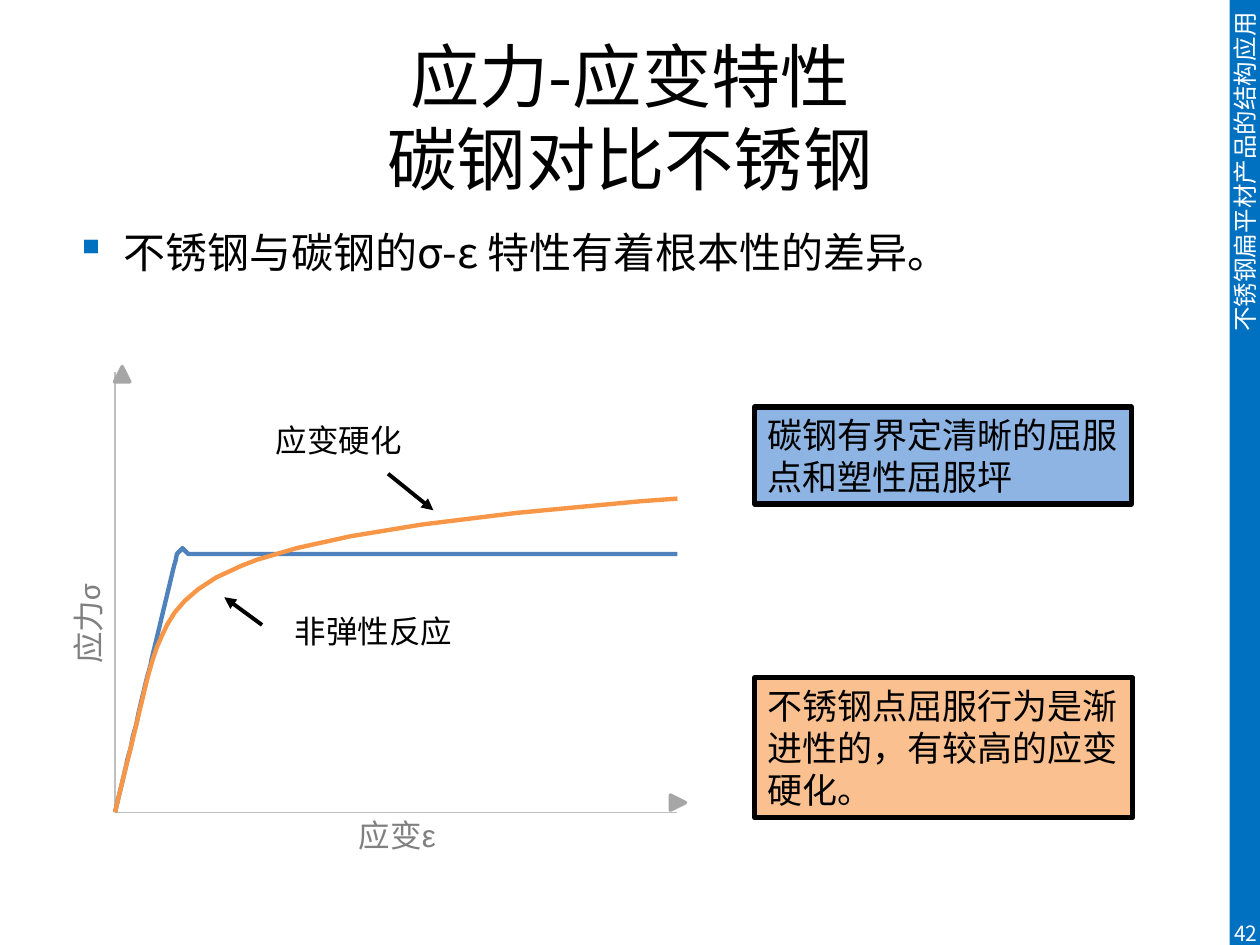
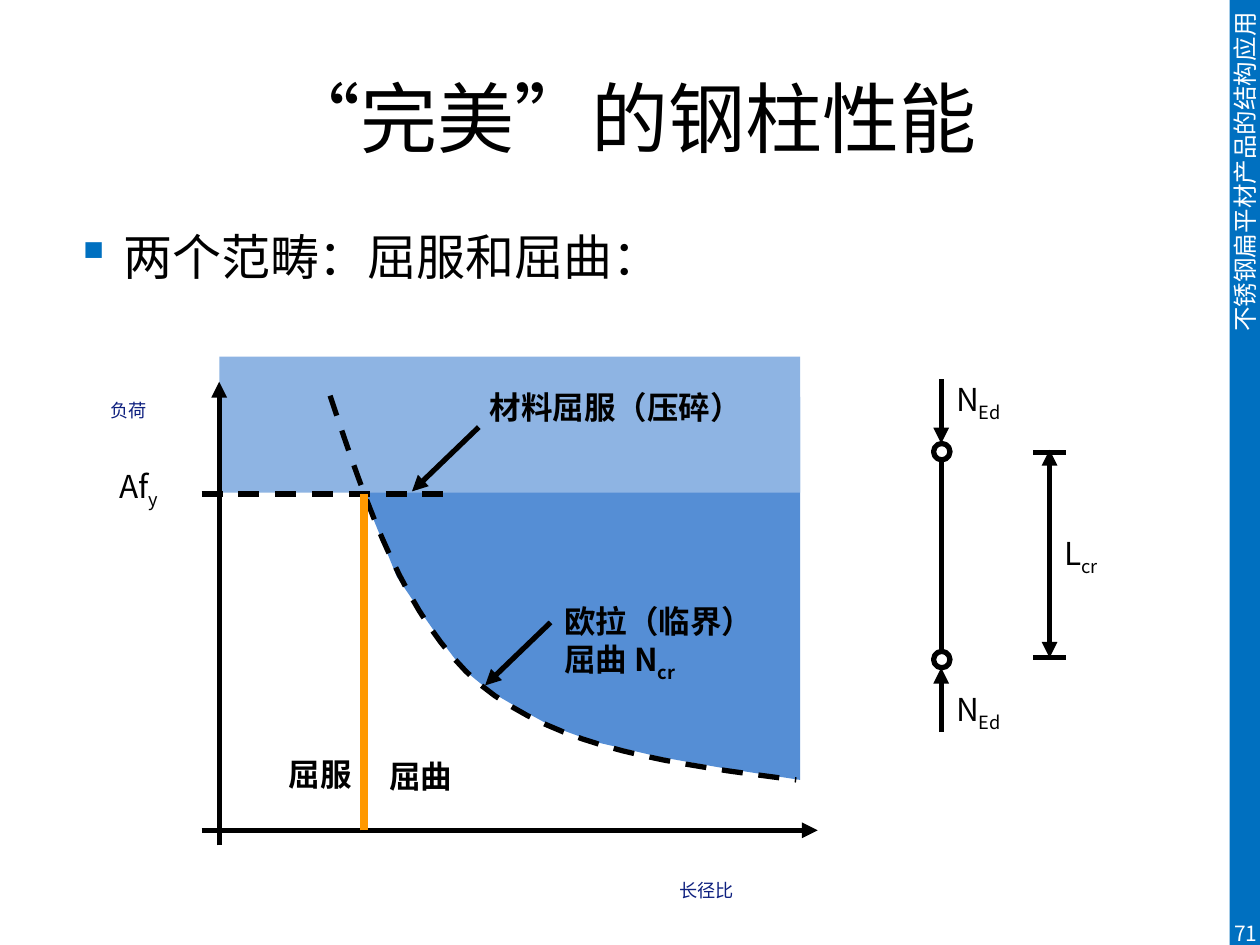
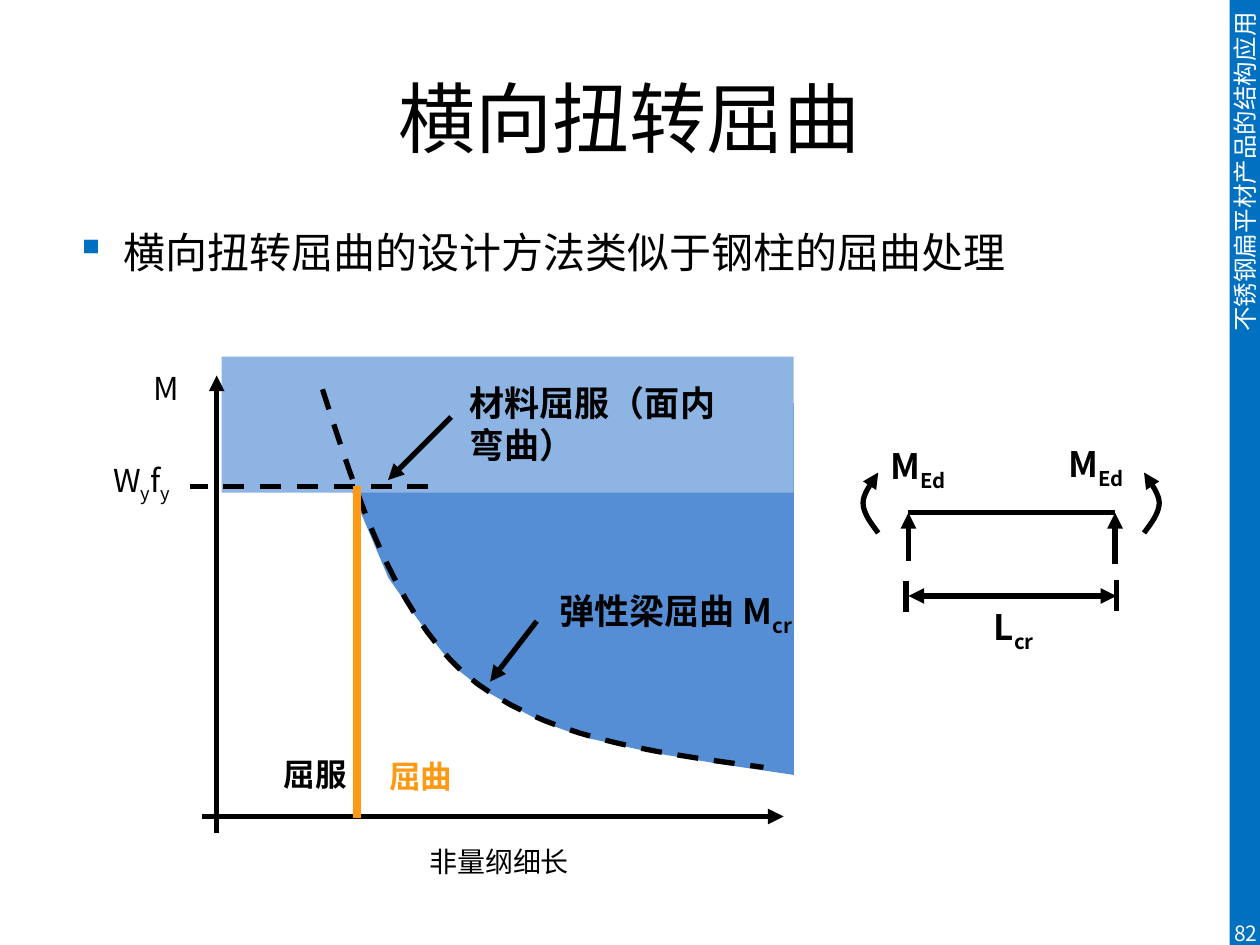
from lxml import etree
from pptx import Presentation
from pptx.chart.data import XyChartData
from pptx.dml.color import RGBColor
from pptx.enum.chart import XL_CHART_TYPE, XL_TICK_LABEL_POSITION, XL_TICK_MARK
from pptx.enum.dml import MSO_LINE
from pptx.enum.shapes import MSO_CONNECTOR, MSO_SHAPE
from pptx.enum.text import MSO_ANCHOR, PP_ALIGN
from pptx.oxml import parse_xml
from pptx.oxml.ns import nsdecls, qn
from pptx.util import Inches, Pt

LEFT, CENTER, RIGHT = PP_ALIGN.LEFT, PP_ALIGN.CENTER, PP_ALIGN.RIGHT
TOP, MIDDLE = MSO_ANCHOR.TOP, MSO_ANCHOR.MIDDLE
RECTANGLE, OVAL = MSO_SHAPE.RECTANGLE, MSO_SHAPE.OVAL
TRIANGLE = MSO_SHAPE.ISOSCELES_TRIANGLE
STRAIGHT, DASH = MSO_CONNECTOR.STRAIGHT, MSO_LINE.DASH
SMOOTH_SCATTER = XL_CHART_TYPE.XY_SCATTER_SMOOTH_NO_MARKERS
NO_LABELS, NO_TICKS = XL_TICK_LABEL_POSITION.NONE, XL_TICK_MARK.NONE

FONT = "Noto Sans CJK SC"
GREEK_FONTS = {"ε": "Arial", "σ": "Calibri"}
COLORS = {
    "band": "0070C0", "white": "FFFFFF", "black": "000000", "navy": "0E207F",
    "label": "808080", "arrowhead": "A6A6A6", "axis": "BFBFBF",
    "yield": "8EB4E3", "buckling": "558ED5", "stainless box": "FAC090",
    "stainless": "F79646", "carbon": "4F81BD",
    "orange": "FF9900", "amber": "FE9914",
}
RGB = {name: RGBColor.from_string(value) for name, value in COLORS.items()}


def add_text(slide, box, text, size=18, color="black", bold=False, align=LEFT,
             anchor=TOP, fill=None, border=0, margin=None):
    """Text alternates between normal and subscript at each bar."""
    left, top, width, height = [Inches(value) for value in box]
    if fill:
        shape = slide.shapes.add_shape(RECTANGLE, left, top, width, height)
        shape.shadow.inherit = False
        shape.fill.solid()
        shape.fill.fore_color.rgb = RGB[fill]
        if border:
            shape.line.color.rgb = RGB["black"]
            shape.line.width = Pt(border)
        else:
            shape.line.fill.background()
    else:
        shape = slide.shapes.add_textbox(left, top, width, height)
    frame = shape.text_frame
    frame.word_wrap = True
    frame.vertical_anchor = anchor
    if margin is not None:
        frame.margin_left = frame.margin_right = Inches(margin)
        frame.margin_top = frame.margin_bottom = Inches(margin)
    paragraph = frame.paragraphs[0]
    paragraph.alignment = align
    for line_number, line in enumerate(text.split("\n")):
        if line_number:
            paragraph.add_line_break()
        for index, part in enumerate(line.split("|")):
            if not part:
                continue
            run = paragraph.add_run()
            run.text = part
            run.font.size = Pt(size)
            run.font.bold = bold
            run.font.color.rgb = RGB[color]
            run.font.name = GREEK_FONTS.get(part, FONT)
            properties = run.font._element
            etree.SubElement(properties, qn("a:ea")).set("typeface", FONT)
            if index % 2 and part not in GREEK_FONTS:
                properties.set("baseline", "-25000")
    return shape


def add_line(slide, points, width=3, color="black", dashed=False, head=False, tail=False):
    """Two points give a connector, more give an open outline."""
    corners = [(Inches(x), Inches(y)) for x, y in points]
    if len(corners) == 2:
        shape = slide.shapes.add_connector(STRAIGHT, *corners[0], *corners[1])
    else:
        builder = slide.shapes.build_freeform(*corners[0], scale=1.0)
        builder.add_line_segments(corners[1:], close=False)
        shape = builder.convert_to_shape()
        shape.fill.background()
    shape.line.color.rgb = RGB[color]
    shape.line.width = Pt(width)
    if dashed:
        shape.line.dash_style = DASH
    line = shape.line._get_or_add_ln()
    for tag, wanted in (("a:headEnd", head), ("a:tailEnd", tail)):
        if wanted:
            etree.SubElement(line, qn(tag)).set("type", "triangle")
    etree.SubElement(shape._element.spPr, qn("a:effectLst"))


presentation = Presentation()
presentation.slide_width, presentation.slide_height = Inches(10), Inches(7.5)

# Side band, title, bullet and page number of every slide
slides = []
for title, title_size, bullet, bullet_size, number in [
    ("应力-应变特性\n碳钢对比不锈钢", 39.6, "不锈钢与碳钢的σ-ε 特性有着根本性的差异。", 24, "42"),
    ("“完美”的钢柱性能", 44, "两个范畴：屈服和屈曲：", 28, "71"),
    ("横向扭转屈曲", 44, "横向扭转屈曲的设计方法类似于钢柱的屈曲处理", 24, "82"),
]:
    slide = presentation.slides.add_slide(presentation.slide_layouts[6])
    slides.append(slide)
    band = add_text(slide, (9.76, 0, 0.24, 7.5), "不锈钢扁平材产品的结构应用", 14,
                    "white", align=RIGHT, anchor=MIDDLE, fill="band")
    band.text_frame._txBody.bodyPr.set("vert", "vert270")
    add_text(slide, (0.5, 0.3, 9, 1.25), title, title_size, align=CENTER, anchor=MIDDLE)
    body = add_text(slide, (0.5, 1.75, 9, 5.39), bullet, bullet_size)
    paragraph = body.text_frame.paragraphs[0]
    paragraph.space_before = Pt(bullet_size * 0.2)
    properties = paragraph._p.get_or_add_pPr()
    properties.set("marL", str(Inches(0.38)))
    properties.set("indent", str(-Inches(0.38)))
    bullet_color = etree.SubElement(properties, qn("a:buClr"))
    etree.SubElement(bullet_color, qn("a:srgbClr")).set("val", COLORS["band"])
    etree.SubElement(properties, qn("a:buChar")).set("char", "▪")
    add_text(slide, (9.65, 7.21, 0.43, 0.4), number, 12, "white", align=RIGHT, anchor=MIDDLE)

stress_slide, column_slide, beam_slide = slides

# Stress-strain chart: elastic part plus a power law, then measured strains
MODULUS = 40000
stainless_stress = [round(step * 100 / 53) for step in range(54)]
stainless_strain = [round(stress / MODULUS + 0.00175 * (stress / 44) ** 8.2, 5)
                    for stress in stainless_stress[:33]]
stainless_strain += [0.04, 0.04, 0.05, 0.07, 0.08, 0.1, 0.11, 0.13, 0.15, 0.17, 0.2,
                     0.23, 0.25, 0.29, 0.32, 0.35, 0.39, 0.43, 0.48, 0.52, 0.57]
carbon_stress = stainless_stress[:24] + [44, 45] + [44] * 10
carbon_strain = [round(stress / MODULUS, 5) for stress in carbon_stress[:25]]
carbon_strain += [0.0012, 0.0013, 0.0014, 0.0015, 0.0016, 0.0017, 0.0018,
                  0.003, 0.005, 0.01, 0.015]

chart_data = XyChartData()
for name, strains, stresses in [("Series 1", stainless_strain, stainless_stress),
                                ("Series 2", carbon_strain, carbon_stress)]:
    series = chart_data.add_series(name)
    for strain, stress in zip(strains, stresses):
        series.add_data_point(strain, stress)
chart = stress_slide.shapes.add_chart(SMOOTH_SCATTER, Inches(0.82), Inches(2.88),
                                      Inches(4.65), Inches(3.64), chart_data).chart
chart.has_legend = chart.has_title = False
chart.font.name, chart.font.size = "Calibri", Pt(10)
chart.font.color.rgb = RGB["black"]
chart.plots[0].vary_by_categories = False
for series, color in zip(chart.plots[0].series, ("stainless", "carbon")):
    series.smooth = True
    series.format.line.color.rgb = RGB[color]
    series.format.line.width = Pt(2.5)
for axis, maximum in ((chart.category_axis, 0.01), (chart.value_axis, 75)):
    axis.minimum_scale, axis.maximum_scale = 0, maximum
    axis.has_major_gridlines = False
    axis.tick_label_position = NO_LABELS
    axis.major_tick_mark = axis.minor_tick_mark = NO_TICKS
    axis.format.line.color.rgb = RGB["axis"]
    axis.format.line.width = Pt(0.75)
plot_area = chart._chartSpace.chart.plotArea
for layout in plot_area.findall(qn("c:layout")):
    plot_area.remove(layout)
plot_area.insert(0, parse_xml(
    f'<c:layout {nsdecls("c")}><c:manualLayout><c:layoutTarget val="inner"/>'
    '<c:xMode val="edge"/><c:yMode val="edge"/><c:x val="0.02"/><c:y val="0.02"/>'
    '<c:w val="0.96"/><c:h val="0.96"/></c:manualLayout></c:layout>'))

# Axis arrowheads and axis names
for left, top, rotation in ((5.32, 6.31, 90), (0.91, 2.91, 0)):
    arrowhead = stress_slide.shapes.add_shape(TRIANGLE, Inches(left), Inches(top),
                                              Inches(0.12), Inches(0.12))
    arrowhead.rotation = rotation
    arrowhead.shadow.inherit = False
    arrowhead.fill.solid()
    arrowhead.fill.fore_color.rgb = arrowhead.line.color.rgb = RGB["arrowhead"]
    arrowhead.line.width = Pt(2)
add_text(stress_slide, (2.75, 6.43, 1.03, 0.4), "应变|ε", color="label")
stress_name = add_text(stress_slide, (0.19, 4.64, 1.03, 0.42), "应力|σ", color="label")
stress_name.rotation = 270

# Curve notes and steel descriptions
add_text(stress_slide, (2.24, 4.81, 2.65, 0.4), "非弹性反应")
add_text(stress_slide, (2.09, 3.29, 1.69, 0.4), "应变硬化")
add_line(stress_slide, [(2.08, 4.96), (1.78, 4.74)], 2.25, tail=True)
add_line(stress_slide, [(3.08, 3.76), (3.44, 4.05)], 2.25, tail=True)
add_text(stress_slide, (5.99, 3.23, 2.99, 0.77), "碳钢有界定清晰的屈服点和塑性屈服坪",
         20, fill="yield", border=3)
add_text(stress_slide, (5.99, 5.38, 3, 1.11), "不锈钢点屈服行为是渐进性的，有较高的应变硬化。",
         20, fill="stainless box", border=3)

# Buckling diagrams: outlines as fractions of their boxes
region_outline = [(0, 0), (1, 0), (1, 1), (0.84, 0.97), (0.7, 0.94), (0.56, 0.9),
                  (0.47, 0.86), (0.41, 0.82), (0.34, 0.77), (0.28, 0.71), (0.23, 0.63),
                  (0.19, 0.56), (0.14, 0.47), (0.11, 0.38), (0.08, 0.29), (0.05, 0.2),
                  (0.03, 0.11)]
curve_beziers = [((0, 0), (0.08, 0.29), (0.16, 0.58), (0.32, 0.75)),
                 ((0.32, 0.75), (0.49, 0.92), (0.74, 0.96), (1, 1))]
moment_beziers = [((1, 1), (0.5, 0.83), (0, 0.67), (0, 0.5)),
                  ((0, 0.5), (0, 0.33), (0.83, 0.08), (1, 0))]
outlines = []
for beziers in (curve_beziers, moment_beziers):
    outline = [beziers[0][0]]
    for bezier in beziers:
        for step in range(1, 17):
            t = step / 16
            weights = ((1 - t) ** 3, 3 * t * (1 - t) ** 2, 3 * t ** 2 * (1 - t), t ** 3)
            outline.append(tuple(sum(weight * point[axis] for weight, point in zip(weights, bezier))
                                 for axis in (0, 1)))
    outlines.append(outline)
curve_outline, moment_outline = outlines

for slide, region, yield_box, curve, axes, level, divider, divider_color, pointers in [
    (column_slide, (2.63, 3.15, 3.72, 3.04), (1.74, 2.83, 4.61, 1.08), (2.62, 3.14, 3.7, 3.05),
     [[(1.74, 6.71), (1.74, 3.03)], [(1.6, 6.59), (6.49, 6.59)]], [(1.6, 3.92), (3.58, 3.92)],
     [(2.89, 6.59), (2.89, 3.92)], "orange",
     [[(3.8, 3.39), (3.27, 3.9)], [(4.37, 4.94), (3.85, 5.44)]]),
    (beam_slide, (2.56, 3.2, 3.74, 2.95), (1.76, 2.83, 4.54, 1.08), (2.56, 3.09, 3.5, 3),
     [[(1.72, 6.61), (1.72, 2.98)], [(1.6, 6.48), (6.22, 6.48)]], [(3.4, 3.86), (1.51, 3.86)],
     [(2.83, 6.49), (2.83, 3.86)], "amber",
     [[(3.58, 3.31), (3.08, 3.81)], [(4.26, 4.93), (3.89, 5.41)]]),
]:
    left, top, width, height = region
    corners = [(Inches(left + x * width), Inches(top + y * height)) for x, y in region_outline]
    builder = slide.shapes.build_freeform(*corners[0], scale=1.0)
    builder.add_line_segments(corners[1:], close=True)
    buckling_region = builder.convert_to_shape()
    buckling_region.shadow.inherit = False
    buckling_region.fill.solid()
    buckling_region.fill.fore_color.rgb = RGB["buckling"]
    buckling_region.line.fill.background()
    add_text(slide, yield_box, "", fill="yield")
    for arrow in axes + pointers:
        add_line(slide, arrow, tail=True)
    add_line(slide, level, dashed=True)
    left, top, width, height = curve
    add_line(slide, [(left + x * width, top + y * height) for x, y in curve_outline], dashed=True)
    add_line(slide, divider, 4.5, divider_color)

# Column diagram labels
add_text(column_slide, (0.85, 3.66, 0.85, 0.76), "Af|y")
add_text(column_slide, (0.78, 2.95, 0.85, 0.76), "|负荷", color="navy")
add_text(column_slide, (3.32, 6.76, 4.58, 0.51), "|长径比", color="navy", align=CENTER)
add_text(column_slide, (3.79, 3.03, 2.38, 0.63), "材料屈服（压碎）", bold=True)
add_text(column_slide, (4.38, 4.73, 1.93, 0.64), "欧拉（临界）屈曲 N|cr", bold=True)
add_text(column_slide, (1.6, 5.94, 1.29, 0.4), "屈服", bold=True, align=RIGHT)
add_text(column_slide, (2.99, 5.96, 1.58, 0.4), "屈曲", bold=True)

# Pinned column with its loads and length
for top in (3.52, 5.17):
    pin = column_slide.shapes.add_shape(OVAL, Inches(7.41), Inches(top), Inches(0.13), Inches(0.13))
    pin.shadow.inherit = False
    pin.fill.background()
    pin.line.color.rgb = RGB["black"]
    pin.line.width = Pt(3)
add_line(column_slide, [(7.47, 3.65), (7.47, 5.17)])
for start, end in ((3.01, 3.52), (5.81, 5.3)):
    add_line(column_slide, [(7.47, start), (7.47, end)], tail=True)
for top in (2.97, 5.43):
    add_text(column_slide, (7.49, top, 0.83, 0.64), "N|Ed")
for y in (3.59, 5.22):
    add_line(column_slide, [(8.2, y), (8.46, y)])
add_line(column_slide, [(8.33, 3.57), (8.33, 5.22)], head=True, tail=True)
add_text(column_slide, (8.35, 4.19, 0.69, 0.63), "L|cr")

# Beam diagram labels
add_text(beam_slide, (1.12, 2.88, 1.15, 0.4), "M")
add_text(beam_slide, (0.8, 3.61, 0.89, 0.75), "W|y|f|y")
add_text(beam_slide, (3.31, 6.65, 4.4, 0.5), "非量纲细长", 16)
add_text(beam_slide, (3.63, 2.98, 2.4, 0.62), "材料屈服（面内弯曲）", 20, bold=True)
add_text(beam_slide, (4.34, 4.63, 2.09, 0.62), "弹性梁屈曲 M|cr", 20, bold=True)
add_text(beam_slide, (1.56, 5.94, 1.29, 0.4), "屈服", bold=True, align=RIGHT)
add_text(beam_slide, (2.99, 5.96, 1.58, 0.4), "屈曲", color="amber", bold=True)

# Beam with its supports, end moments and length
add_line(beam_slide, [(7.21, 4.07), (8.85, 4.07)])
for x, bottom in ((7.21, 4.45), (8.85, 4.48)):
    add_line(beam_slide, [(x, bottom), (x, 4.07)], tail=True)
for inner_x, direction in ((6.97, -1), (9.08, 1)):
    add_line(beam_slide, [(inner_x + direction * 0.12 * (1 - x), 3.75 + 0.48 * y)
                          for x, y in moment_outline], tail=True)
for left, top in ((7.07, 3.53), (8.48, 3.51)):
    add_text(beam_slide, (left, top, 0.55, 0.48), "M|Ed", 20, bold=True, margin=0)
for x, top in ((7.19, 4.61), (8.86, 4.6)):
    add_line(beam_slide, [(x, top), (x, top + 0.25)])
add_line(beam_slide, [(7.21, 4.73), (8.86, 4.73)], head=True, tail=True)
add_text(beam_slide, (7.79, 4.76, 0.66, 0.62), "L|cr", 20, bold=True)

presentation.save("out.pptx")
